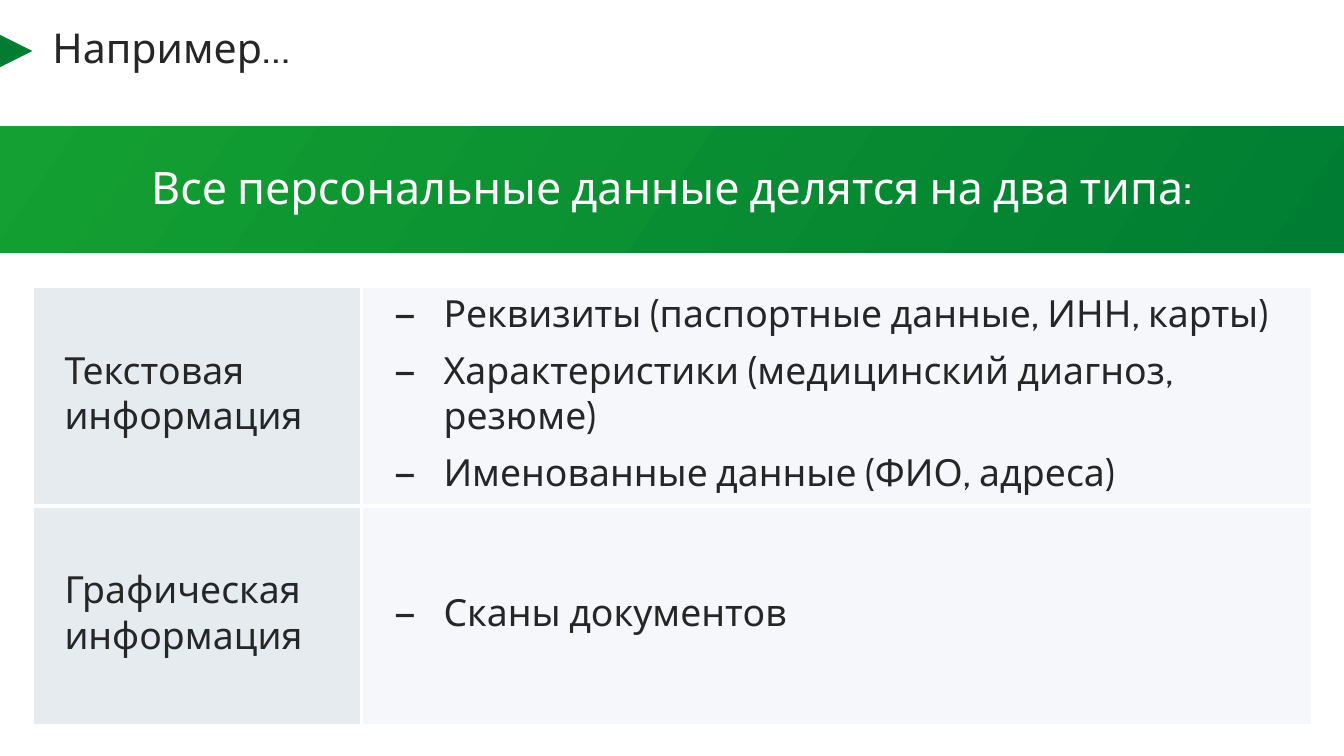
from lxml import etree
from pptx import Presentation
from pptx import util as u
from pptx.dml.color import RGBColor
from pptx.enum import shapes, text
from pptx.oxml.ns import qn

SLIDE_WIDTH = 10
SLIDE_HEIGHT = SLIDE_WIDTH * 9 / 16
FONT = "Cabin"
COLORS = {
    "ink": "262626",
    "white": "FFFFFF",
    "light_green": "14A032",
    "dark_green": "007D32",
    "label": "E6EBF0",
    "details": "F5F7FA",
}
INFORMATION_TYPES = [
    ("Текстовая информация", [
        "Реквизиты (паспортные данные, ИНН, карты)",
        "Характеристики (медицинский диагноз, резюме)",
        "Именованные данные (ФИО, адреса)",
    ]),
    ("Графическая информация", ["Сканы документов"]),
]


def rgb(name):
    return RGBColor.from_string(COLORS[name])


def write(frame, lines, size=20, color="ink", align=text.PP_ALIGN.LEFT,
          before=0, spacing=None, bullet=None, indent=0.37):
    """Fill a text frame with one paragraph per line."""
    frame.word_wrap = True
    for index, line in enumerate(lines):
        paragraph = frame.add_paragraph() if index else frame.paragraphs[0]
        paragraph.alignment = align
        paragraph.space_before = u.Pt(before)
        if spacing:
            paragraph.line_spacing = u.Pt(spacing)
        if bullet:
            properties = paragraph._p.get_or_add_pPr()
            properties.set("marL", str(u.Inches(indent)))
            properties.set("indent", str(-u.Inches(indent)))
            etree.SubElement(properties, qn("a:buFont"), typeface=FONT)
            etree.SubElement(properties, qn("a:buChar"), char=bullet)
        run = paragraph.add_run()
        run.text = line
        run.font.name = FONT
        run.font.size = u.Pt(size)
        run.font.color.rgb = rgb(color)


def set_margins(holder, left, top, right, bottom):
    holder.margin_left, holder.margin_top = u.Inches(left), u.Inches(top)
    holder.margin_right, holder.margin_bottom = u.Inches(right), u.Inches(bottom)


def set_borders(cell, color="white", width=2.25):
    properties = cell._tc.get_or_add_tcPr()
    for position, side in enumerate(("lnL", "lnR", "lnT", "lnB")):
        line = etree.Element(qn(f"a:{side}"), w=str(u.Pt(width)))
        fill = etree.SubElement(line, qn("a:solidFill"))
        etree.SubElement(fill, qn("a:srgbClr"), val=COLORS[color])
        properties.insert(position, line)


def add_heading(slide, left, top, width, height):
    marker_size = 0.24
    marker = slide.shapes.add_shape(
        shapes.MSO_SHAPE.ISOSCELES_TRIANGLE, u.Inches(left), u.Inches(top + 0.06),
        u.Inches(marker_size), u.Inches(marker_size))
    marker.rotation = 90
    marker.shadow.inherit = False
    marker.fill.solid()
    marker.fill.fore_color.rgb = rgb("dark_green")
    marker.line.fill.background()

    offset = 0.39
    title = slide.shapes.add_textbox(
        u.Inches(left + offset), u.Inches(top),
        u.Inches(width - offset), u.Inches(height))
    set_margins(title.text_frame, 0, 0, 0, 0)
    write(title.text_frame, ["Например…"], size=22, spacing=24)


def add_banner(slide, left, top, width, height):
    banner = slide.shapes.add_shape(
        shapes.MSO_SHAPE.RECTANGLE, u.Inches(left), u.Inches(top),
        u.Inches(width), u.Inches(height))
    banner.shadow.inherit = False
    banner.line.fill.background()
    banner.fill.gradient()
    banner.fill.gradient_angle = 360 - 35
    for stop, color in zip(banner.fill.gradient_stops, ("light_green", "dark_green")):
        stop.color.rgb = rgb(color)
    set_margins(banner.text_frame, 0.39, 0, 0.39, 0.04)
    banner.text_frame.vertical_anchor = text.MSO_ANCHOR.MIDDLE
    write(banner.text_frame, ["Все персональные данные делятся на два типа:"],
          size=24, color="white", align=text.PP_ALIGN.CENTER)


def add_types_table(slide, left, top, width, height, label_width=2.45):
    table = slide.shapes.add_table(
        len(INFORMATION_TYPES), 2, u.Inches(left), u.Inches(top),
        u.Inches(width), u.Inches(height)).table
    table.first_row = table.horz_banding = False
    table.columns[0].width = u.Inches(label_width)
    table.columns[1].width = u.Inches(width - label_width)
    for row, (label, details) in enumerate(INFORMATION_TYPES):
        columns = (([label], "label", None), (details, "details", "—"))
        for column, (lines, color, bullet) in enumerate(columns):
            cell = table.cell(row, column)
            cell.fill.solid()
            cell.fill.fore_color.rgb = rgb(color)
            cell.vertical_anchor = text.MSO_ANCHOR.MIDDLE
            set_margins(cell, 0.24, 0, 0.24, 0.04)
            set_borders(cell)
            write(cell.text_frame, lines, before=6, bullet=bullet)


def main():
    deck = Presentation()
    deck.slide_width = u.Inches(SLIDE_WIDTH)
    deck.slide_height = u.Inches(SLIDE_HEIGHT)
    slide = deck.slides.add_slide(deck.slide_layouts[6])
    add_heading(slide, 0, 0.2, 7.71, 0.39)
    add_banner(slide, 0, 0.94, SLIDE_WIDTH, 0.94)
    add_types_table(slide, 0.24, 2.13, 9.53, 3.27)
    deck.save("out.pptx")


if __name__ == "__main__":
    main()
